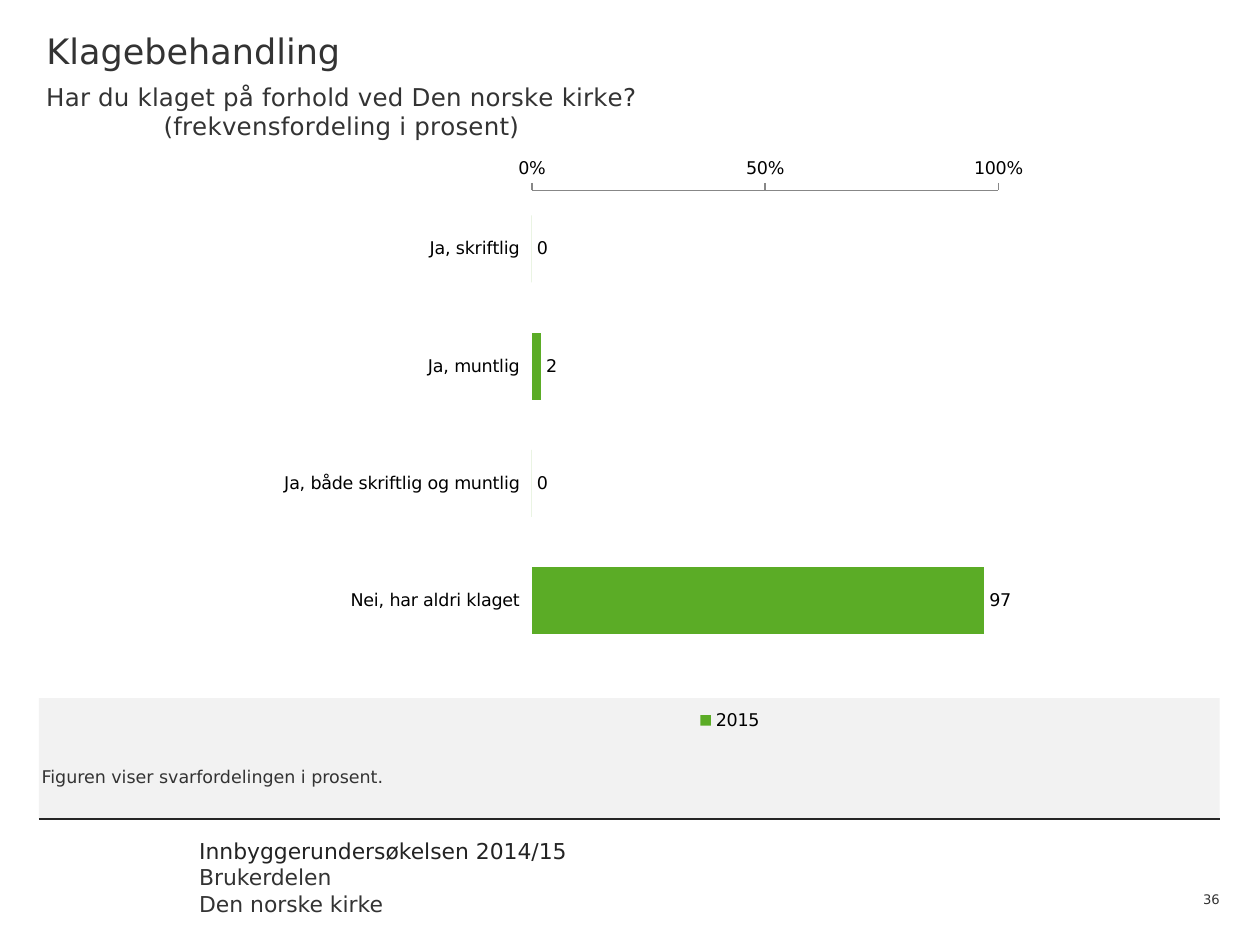
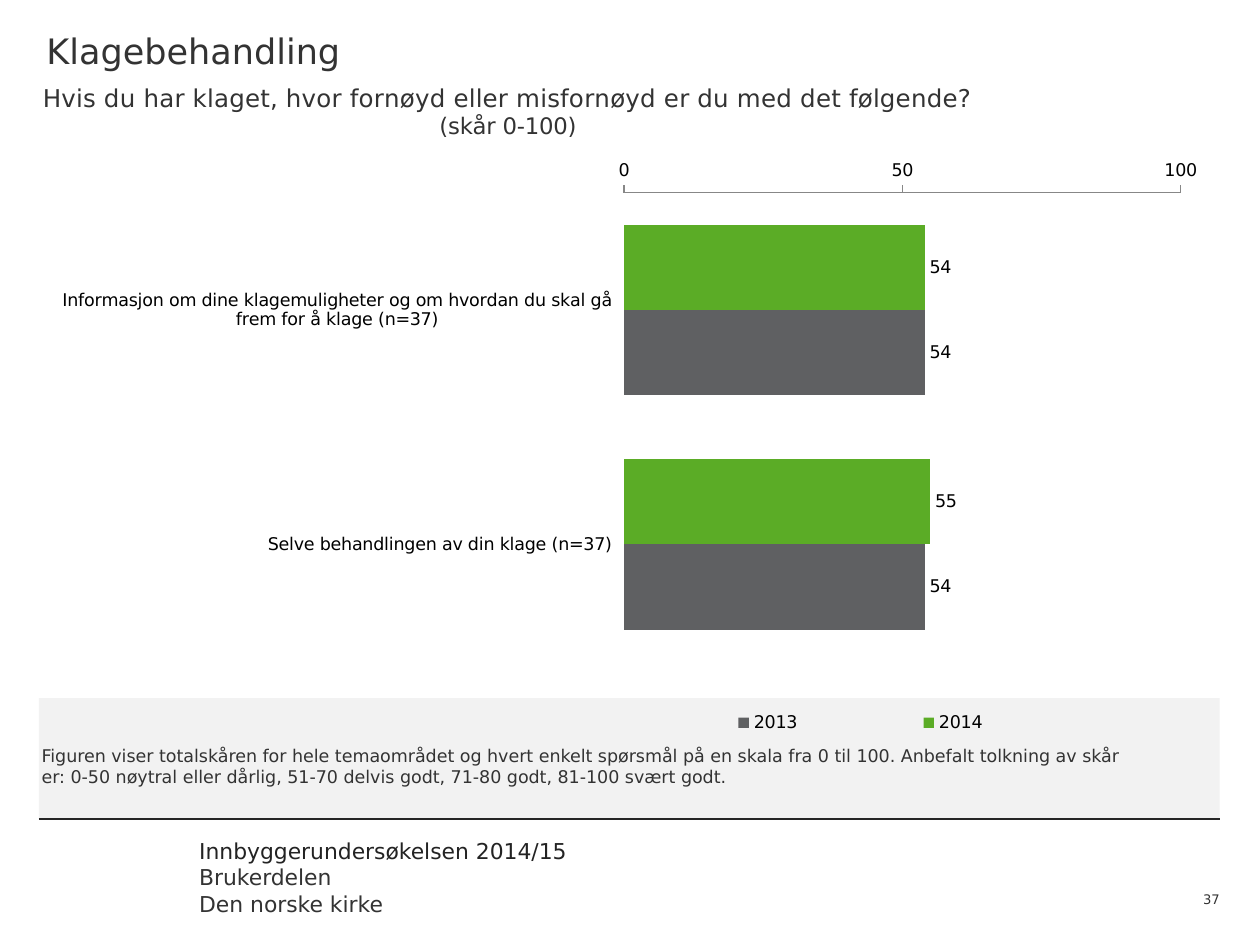
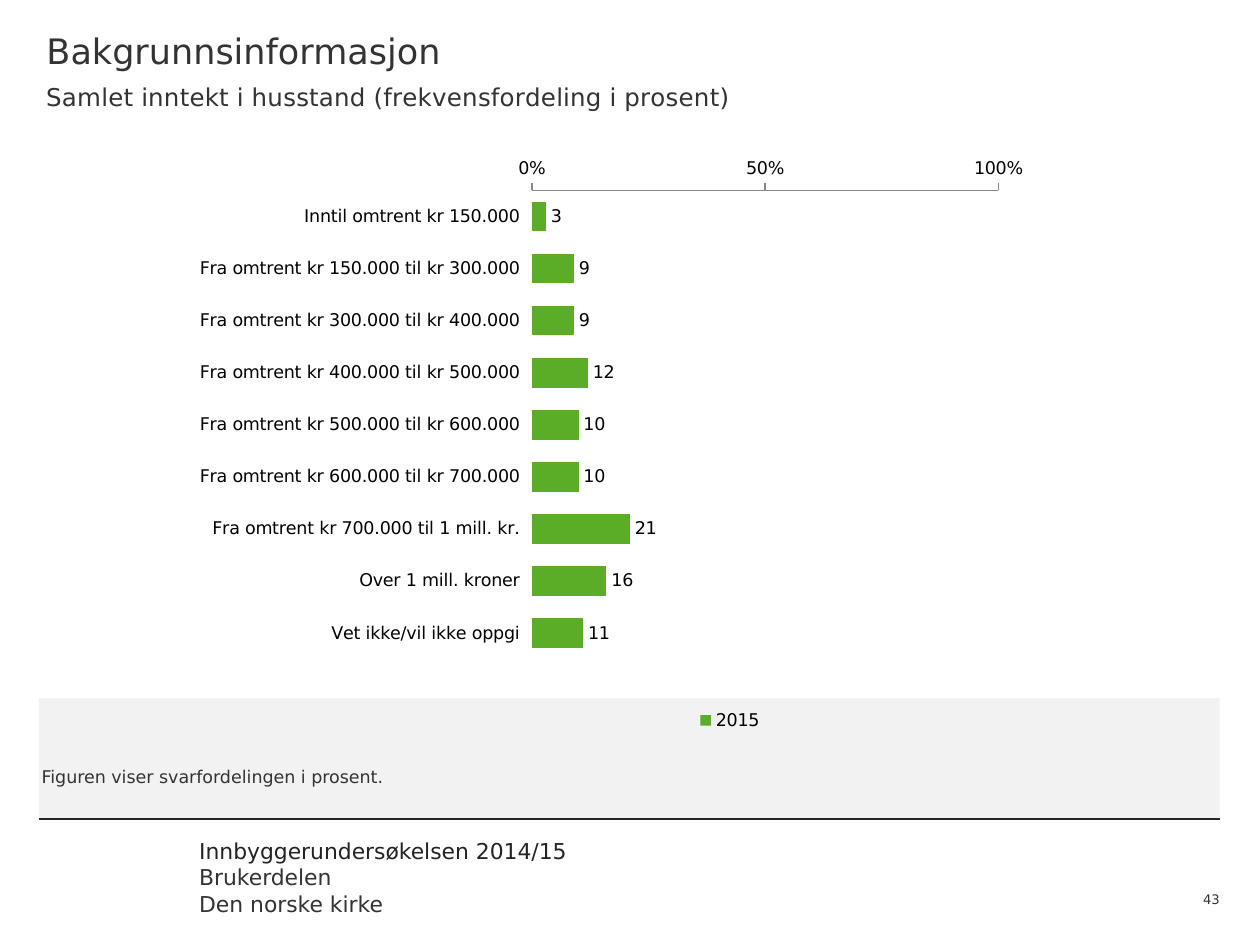
from pptx import Presentation
from pptx.util import Pt
from pptx.dml.color import RGBColor as Rgb
from pptx.chart.data import CategoryChartData as Data
from pptx.enum.chart import XL_CHART_TYPE as Kind, XL_LABEL_POSITION as Spot
from pptx.enum.chart import XL_LEGEND_POSITION as Side, XL_TICK_MARK as Tick
from pptx.enum.shapes import MSO_SHAPE as Form, MSO_CONNECTOR as Link
from pptx.enum.text import MSO_ANCHOR as Anchor, PP_ALIGN as Align
from pptx.oxml import parse_xml
from pptx.oxml.ns import qn, nsdecls

FONT = "DejaVu Sans"
INK, DARK, RULE, BAND = "333333", "232323", "262626", "F2F2F2"
GREEN, GREY, AXIS, BLACK = "5BAC26", "5F6062", "878787", "000000"


def tint(code):
    return Rgb.from_string(code)


def write(par, runs):
    for words, size, color in runs:
        run = par.add_run()
        run.text = words
        font = run.font
        font.name, font.size, font.bold = FONT, Pt(size), False
        font.color.rgb = tint(color)


def place(node, index, x, y, w=None, h=None, inner=False):
    old = node.find(qn("c:layout"))
    if old is not None:
        node.remove(old)
    parts = '<c:layoutTarget val="inner"/>' if inner else ""
    parts += '<c:xMode val="edge"/><c:yMode val="edge"/>'
    for key, val in zip("xywh", (x, y, w, h)):
        if val is not None:
            parts += f'<c:{key} val="{val}"/>'
    node.insert(index, parse_xml(
        f'<c:layout {nsdecls("c")}><c:manualLayout>{parts}</c:manualLayout></c:layout>'))


class Deck:
    def __init__(self):
        self.file = Presentation()
        self.file.slide_width, self.file.slide_height = Pt(720), Pt(540)

    def page(self, title, number, height=59.8):
        self.slide = self.file.slides.add_slide(self.file.slide_layouts[6])
        self.band()
        self.rule()
        self.text((113.8, 478.8, 238.3, 45.4), [
            [("Innbyggerundersøkelsen 2014/15 ", 12.5, DARK), ("Brukerdelen", 12.5, INK)],
            [("Den norske kirke", 12.5, INK)]])
        self.text((26.6, 0, 674.6, height), [[(title, 20, INK)]], top=16.6)
        self.text((657.4, 498.2, 39.6, 20.2), [[(str(number), 7.5, INK)]],
                  anchor=Anchor.BOTTOM, align=Align.RIGHT)

    def band(self):
        box = self.slide.shapes.add_shape(
            Form.RECTANGLE, Pt(22.3), Pt(398.9), Pt(674.7), Pt(69.1))
        box.shadow.inherit = False
        box.fill.solid()
        box.fill.fore_color.rgb = tint(BAND)
        box.line.fill.background()

    def rule(self):
        line = self.slide.shapes.add_connector(
            Link.STRAIGHT, Pt(22.3), Pt(468), Pt(697), Pt(468))
        line.line.color.rgb = tint(RULE)
        line.line.width = Pt(0.75)
        line._element.spPr.append(parse_xml(f'<a:effectLst {nsdecls("a")}/>'))

    def text(self, area, lines, top=0, anchor=Anchor.TOP, align=Align.LEFT):
        frame = self.slide.shapes.add_textbox(*map(Pt, area)).text_frame
        frame.word_wrap = True
        frame.vertical_anchor = anchor
        frame.margin_left = frame.margin_right = frame.margin_bottom = 0
        frame.margin_top = Pt(top)
        for i, runs in enumerate(lines):
            par = frame.add_paragraph() if i else frame.paragraphs[0]
            par.alignment = align
            write(par, runs)

    def note(self, lines, top=429.1):
        self.text((23.8, top, 673.9, 29.5), [[(line, 10, INK)] for line in lines],
                  anchor=Anchor.MIDDLE)

    def chart(self, title, cats, rows, area=(23.8, 43.2, 566, 383.8),
              scale=r"0\%", form="0"):
        data = Data()
        data.categories = cats
        for name, vals, _ in rows:
            data.add_series(name, vals)
        chart = self.slide.shapes.add_chart(
            Kind.BAR_CLUSTERED, *map(Pt, area), data).chart
        chart.font.name, chart.font.size = FONT, Pt(12)
        chart.font.color.rgb = tint(BLACK)
        chart.has_title = True
        write(chart.chart_title.text_frame.paragraphs[0],
              [(words, size, INK) for words, size in title])
        self.axes(chart, scale)
        self.bars(chart.plots[0], [row[2] for row in rows], form)
        chart.has_legend = True
        chart.legend.position = Side.RIGHT
        chart.legend.include_in_layout = False
        chart.legend.font.size = Pt(10)
        root = chart.element
        place(root.find(".//" + qn("c:title")), 1, 0, 0)
        place(root.find(".//" + qn("c:plotArea")), 0, 0.495, 0.171, 0.471, 0.698, True)
        place(root.find(".//" + qn("c:legend")), 1, 0.49, 0.93, 0.41, 0.06)

    def axes(self, chart, scale):
        cat, val = chart.category_axis, chart.value_axis
        for axis in (cat, val):
            axis.has_major_gridlines = False
            axis.major_tick_mark = Tick.OUTSIDE
            axis.tick_labels.font.size = Pt(10)
        cat.reverse_order = True
        cat.format.line.fill.background()
        val.minimum_scale, val.maximum_scale, val.major_unit = 0, 100, 50
        val.tick_labels.number_format = scale
        val.tick_labels.number_format_is_linked = False
        val.format.line.color.rgb = tint(AXIS)
        val.format.line.width = Pt(0.75)

    def bars(self, plot, colors, form):
        plot.gap_width, plot.overlap = 75, 0
        plot.vary_by_categories = False
        for row, color in zip(plot.series, colors):
            row.format.fill.solid()
            row.format.fill.fore_color.rgb = tint(color)
            row.invert_if_negative = False
            tags = row.data_labels
            tags.show_value = True
            tags.position = Spot.OUTSIDE_END
            tags.number_format, tags.number_format_is_linked = form, False
            tags.font.size = Pt(10)


def main():
    deck = Deck()
    share = ["Figuren viser svarfordelingen i prosent."]

    deck.page("Klagebehandling", 36)
    deck.chart(
        [("Har du klaget på forhold ved Den norske kirke? (frekvensfordeling i prosent)", 14)],
        ["Ja, skriftlig", "Ja, muntlig", "Ja, både skriftlig og muntlig",
         "Nei, har aldri klaget"],
        [("2015", [0, 2, 0, 97], GREEN)])
    deck.note(share)

    deck.page("Klagebehandling", 37, 87.8)
    deck.chart(
        [("Hvis du har klaget, hvor fornøyd eller misfornøyd er du med det følgende? ", 14),
         ("(skår 0-100)", 13)],
        ["Informasjon om dine klagemuligheter og om hvordan du skal gå frem for å klage (n=37)",
         "Selve behandlingen av din klage (n=37)"],
        [("2014", [54, 55], GREEN), ("2013", [54, 54], GREY)],
        (22.3, 44.6, 675.4, 383.8), "General", "#,##0")
    deck.note([
        "Figuren viser totalskåren for hele temaområdet og hvert enkelt spørsmål på en skala "
        "fra 0 til 100. Anbefalt tolkning av skår",
        "er: 0-50 nøytral eller dårlig, 51-70 delvis godt, 71-80 godt, 81-100 svært godt."],
        423.1)

    deck.page("Bakgrunnsinformasjon", 43)
    steps = ["150.000", "300.000", "400.000", "500.000", "600.000", "700.000"]
    spans = [f"Fra omtrent kr {low} til kr {high}" for low, high in zip(steps, steps[1:])]
    deck.chart(
        [("Samlet inntekt i husstand (frekvensfordeling i prosent)", 14)],
        ["Inntil omtrent kr 150.000", *spans, "Fra omtrent kr 700.000 til 1 mill. kr.",
         "Over 1 mill. kroner", "Vet ikke/vil ikke oppgi"],
        [("2015", [3, 9, 9, 12, 10, 10, 21, 16, 11], GREEN)])
    deck.note(share)

    deck.file.save("out.pptx")


if __name__ == "__main__":
    main()
